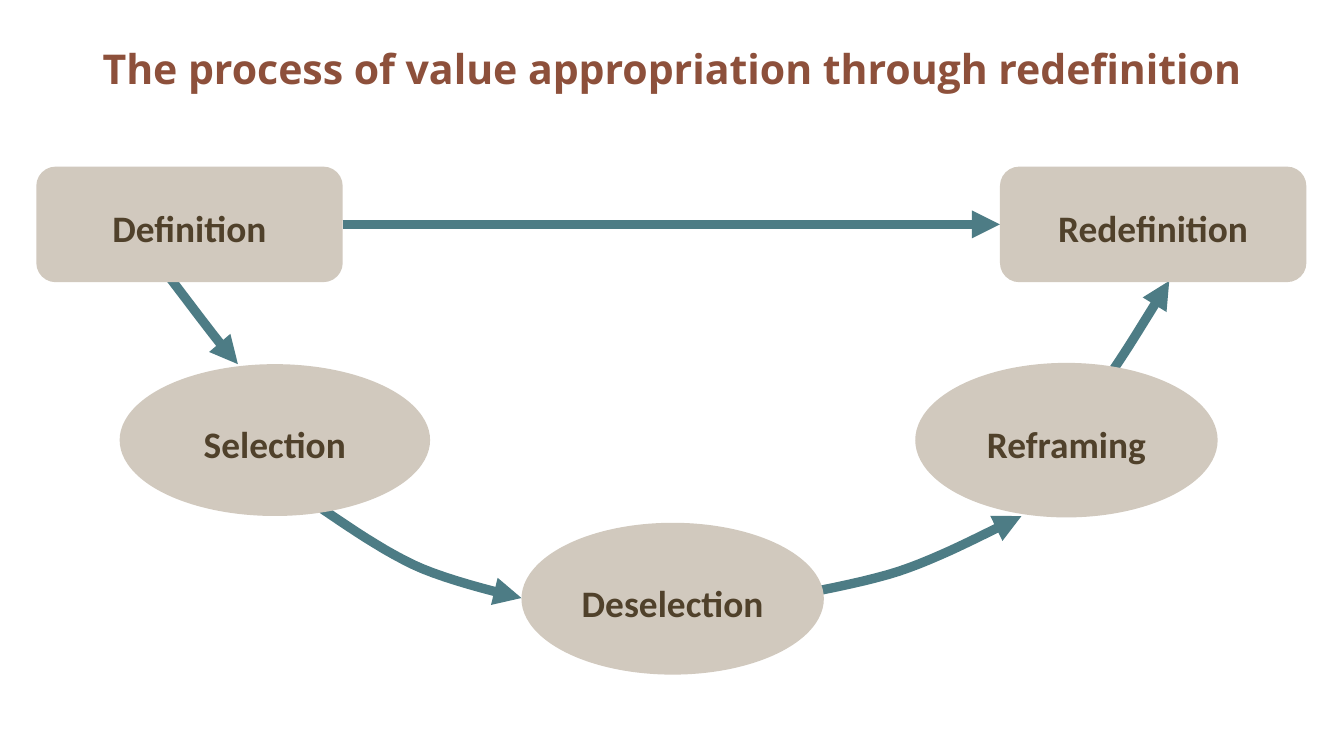
from dataclasses import dataclass

from lxml.etree import SubElement
from pptx import Presentation
from pptx.dml.color import RGBColor
from pptx.enum.shapes import MSO_CONNECTOR, MSO_SHAPE
from pptx.enum.text import MSO_ANCHOR, MSO_AUTO_SIZE, PP_ALIGN
from pptx.oxml.ns import qn
from pptx.util import Inches, Pt


@dataclass(frozen=True)
class Theme:
    title_color: RGBColor = RGBColor(0x8D, 0x50, 0x3B)
    label_color: RGBColor = RGBColor(0x50, 0x41, 0x2B)
    node_fill: RGBColor = RGBColor(0xD1, 0xC9, 0xBE)
    arrow_color: RGBColor = RGBColor(0x4D, 0x7C, 0x85)
    title_font: str = "Open Sans"
    label_font: str = "Calibri"
    title_size: int = 22
    label_size: int = 20
    arrow_width: int = 5


THEME = Theme()
TITLE = "The process of value appropriation through redefinition"
TITLE_BOX = (0.12, 0, 9.76, 1.01)

# label, outline, (left, top, width, height)
STAGES = [
    ("Definition", MSO_SHAPE.ROUNDED_RECTANGLE, (0.27, 1.24, 2.28, 0.86)),
    ("Redefinition", MSO_SHAPE.ROUNDED_RECTANGLE, (7.44, 1.24, 2.28, 0.86)),
    ("Selection", MSO_SHAPE.OVAL, (0.89, 2.71, 2.31, 1.13)),
    ("Deselection", MSO_SHAPE.OVAL, (3.88, 3.89, 2.25, 1.13)),
    ("Reframing", MSO_SHAPE.OVAL, (6.81, 2.7, 2.25, 1.15)),
]

# Each curve: a start point, then two control points and an end per Bézier piece
CURVES = [
    [(1.22, 2.01), (1.45, 2.31), (1.67, 2.61), (1.77, 2.71)],
    [(2.24, 3.68), (2.52, 3.87), (2.8, 4.07), (3.07, 4.2),
     (3.34, 4.33), (3.88, 4.45), (3.88, 4.45)],
    [(5.79, 4.45), (5.79, 4.45), (6.39, 4.35), (6.69, 4.25),
     (6.99, 4.15), (7.29, 3.99), (7.6, 3.84)],
    [(8.24, 2.81), (8.32, 2.71), (8.51, 2.4), (8.7, 2.09)],
]
STEPS = 12


def sample_curve(points):
    """Return points along the chained cubic Bézier pieces, without the start."""
    samples = []
    for first in range(0, len(points) - 1, 3):
        piece = points[first:first + 4]
        for step in range(1, STEPS + 1):
            t = step / STEPS
            weights = ((1 - t) ** 3, 3 * t * (1 - t) ** 2,
                       3 * t ** 2 * (1 - t), t ** 3)
            samples.append(tuple(
                Inches(sum(w * point[axis] for w, point in zip(weights, piece)))
                for axis in (0, 1)))
    return samples


def style_arrow(arrow):
    arrow.line.color.rgb = THEME.arrow_color
    arrow.line.width = Pt(THEME.arrow_width)
    SubElement(arrow.line._get_or_add_ln(), qn("a:tailEnd"), type="triangle")


def write_text(frame, text, font_name, size, color):
    frame.vertical_anchor = MSO_ANCHOR.MIDDLE
    frame.word_wrap = True
    frame.auto_size = MSO_AUTO_SIZE.NONE
    para = frame.paragraphs[0]
    para.alignment = PP_ALIGN.CENTER
    span = para.add_run()
    span.text = text
    span.font.name = font_name
    span.font.size = Pt(size)
    span.font.bold = True
    span.font.color.rgb = color
    return para


def add_curved_arrow(page, points):
    builder = page.shapes.build_freeform(*(Inches(v) for v in points[0]))
    builder.add_line_segments(sample_curve(points), close=False)
    curve = builder.convert_to_shape()
    curve.fill.background()
    curve.shadow.inherit = False
    style_arrow(curve)


def add_stage(page, label, outline, box):
    stage = page.shapes.add_shape(outline, *(Inches(v) for v in box))
    stage.shadow.inherit = False
    stage.fill.solid()
    stage.fill.fore_color.rgb = THEME.node_fill
    stage.line.fill.background()
    para = write_text(stage.text_frame, label, THEME.label_font,
                      THEME.label_size, THEME.label_color)
    para.line_spacing = 1.15
    para.space_after = Pt(10)
    return stage


def add_straight_arrow(page, source, target):
    arrow = page.shapes.add_connector(MSO_CONNECTOR.STRAIGHT, 0, 0, 0, 0)
    arrow.begin_connect(source, 3)
    arrow.end_connect(target, 1)
    style_arrow(arrow)
    SubElement(arrow._element.spPr, qn("a:effectLst"))


def main():
    deck = Presentation()
    deck.slide_width = Inches(10)
    deck.slide_height = deck.slide_width * 9 // 16
    page = deck.slides.add_slide(deck.slide_layouts[5])

    title = page.shapes.title
    title.left, title.top, title.width, title.height = (
        Inches(v) for v in TITLE_BOX)
    write_text(title.text_frame, TITLE, THEME.title_font,
               THEME.title_size, THEME.title_color)

    for points in CURVES:
        add_curved_arrow(page, points)
    stages = {label: add_stage(page, label, outline, box)
              for label, outline, box in STAGES}
    add_straight_arrow(page, stages["Definition"], stages["Redefinition"])
    deck.save("out.pptx")


if __name__ == "__main__":
    main()
